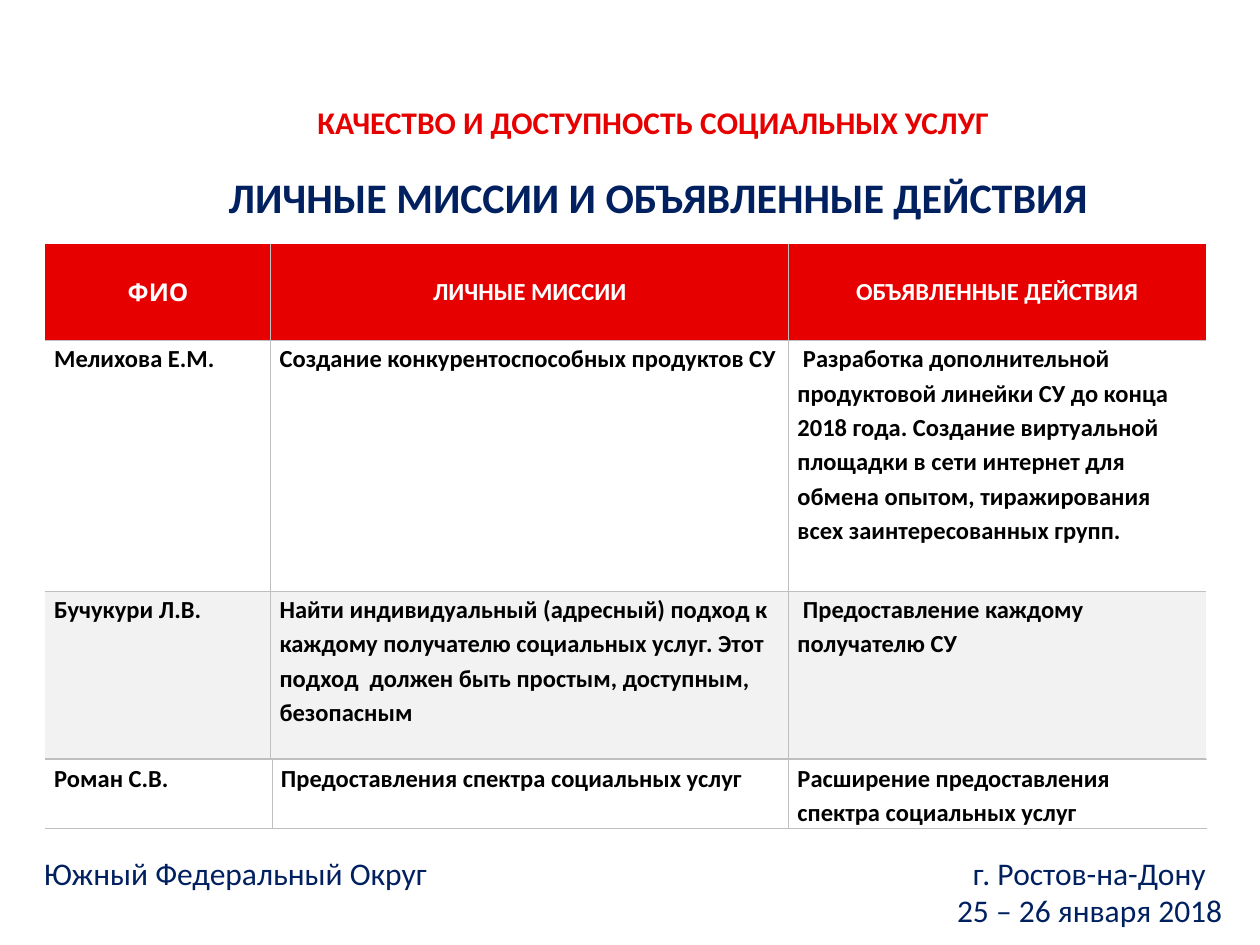
from lxml import etree
from pptx import Presentation
from pptx.dml.color import RGBColor
from pptx.enum.text import MSO_ANCHOR, MSO_AUTO_SIZE, PP_ALIGN
from pptx.oxml.ns import qn
from pptx.util import Inches, Pt

LEFT, CENTER, RIGHT = PP_ALIGN.LEFT, PP_ALIGN.CENTER, PP_ALIGN.RIGHT
TOP, MIDDLE = MSO_ANCHOR.TOP, MSO_ANCHOR.MIDDLE
TITLE_ONLY = 5

COLORS = {"red": "E60000", "navy": "002060", "white": "FFFFFF",
          "black": "000000", "band": "F2F2F2", "border": "BFBFBF"}

# Content
TITLE = "ЛИЧНЫЕ МИССИИ И ОБЪЯВЛЕННЫЕ ДЕЙСТВИЯ"
TOPIC = "КАЧЕСТВО И ДОСТУПНОСТЬ СОЦИАЛЬНЫХ УСЛУГ"
REGION, CITY, DATES = "Южный Федеральный Округ", "г. Ростов-на-Дону", "25 – 26 января 2018"
HEADER = ["ФИО", "ЛИЧНЫЕ МИССИИ", "ОБЪЯВЛЕННЫЕ ДЕЙСТВИЯ"]
MISSIONS = [
    ["Мелихова Е.М.",
     "Создание конкурентоспособных продуктов СУ",
     " Разработка дополнительной продуктовой линейки СУ до конца 2018 года. "
     "Создание виртуальной площадки в сети интернет для обмена опытом, "
     "тиражирования всех заинтересованных групп."],
    ["Бучукури Л.В.",
     "Найти индивидуальный (адресный) подход к каждому получателю социальных услуг. "
     "Этот подход  должен быть простым, доступным, безопасным",
     " Предоставление каждому получателю СУ"],
]
LAST_MISSION = ["Роман С.В.", "Предоставления спектра социальных услуг",
                "Расширение предоставления спектра социальных услуг"]

# Tables: position, column widths, row heights, rows, whether the first row is a header
TABLES = [
    ((0.36, 1.94), (1.79, 4.11, 3.31), (0.76, 1.99, 1.33), [HEADER] + MISSIONS, True),
    ((0.36, 6.03), (1.8, 4.1, 3.32), (0.54,), [LAST_MISSION], False),
]


def rgb(name):
    return RGBColor.from_string(COLORS[name])


def add_run(paragraph, text, size, color, bold=False, font="Calibri"):
    run = paragraph.add_run()
    run.text = text
    run.font.size, run.font.bold, run.font.name = Pt(size), bold, font
    run.font.color.rgb = rgb(color)


def place(shape, left, top, width, height, anchor):
    shape.left, shape.top = Inches(left), Inches(top)
    shape.width, shape.height = Inches(width), Inches(height)
    frame = shape.text_frame
    frame.auto_size, frame.word_wrap = MSO_AUTO_SIZE.NONE, True
    frame.vertical_anchor = anchor
    return frame


def set_borders(cell, visible):
    properties = cell._tc.get_or_add_tcPr()
    for side in ("L", "R", "T", "B"):
        line = etree.SubElement(properties, qn(f"a:ln{side}"), w=str(Pt(0.5)))
        if side in visible:
            fill = etree.SubElement(line, qn("a:solidFill"))
            etree.SubElement(fill, qn("a:srgbClr"), val=COLORS["border"])
        else:
            etree.SubElement(line, qn("a:noFill"))


def add_mission_table(slide, position, widths, heights, rows, has_header):
    left, top = position
    frame = slide.shapes.add_table(len(rows), len(widths), Inches(left), Inches(top),
                                   Inches(sum(widths)), Inches(sum(heights)))
    table = frame.table
    table.first_row, table.horz_banding = has_header, False
    for column, width in zip(table.columns, widths):
        column.width = Inches(width)
    for row, height in zip(table.rows, heights):
        row.height = Inches(height)
    for row_index, texts in enumerate(rows):
        is_header = has_header and row_index == 0
        fill = "red" if is_header else "band" if row_index == 2 else "white"
        for column_index, text in enumerate(texts):
            cell = table.cell(row_index, column_index)
            # Rules run between columns and around rows, leaving the outer sides open
            visible = "B" if is_header else "TB"
            visible += "L" if column_index > 0 else ""
            visible += "R" if column_index < len(widths) - 1 else ""
            set_borders(cell, visible)
            cell.fill.solid()
            cell.fill.fore_color.rgb = rgb(fill)
            cell.margin_left = cell.margin_right = Inches(0.07)
            cell.margin_top = cell.margin_bottom = Inches(0.04 if is_header else 0)
            cell.vertical_anchor = MIDDLE if is_header else TOP
            paragraph = cell.text_frame.paragraphs[0]
            paragraph.alignment = CENTER if is_header else LEFT
            paragraph.line_spacing = 1.0 if is_header else 1.15
            add_run(paragraph, text, 14, "white" if is_header else "black", True,
                    "Cabin" if is_header and column_index == 0 else "Calibri")


def add_footer(slide):
    box = slide.shapes.add_textbox(0, 0, 0, 0)
    frame = place(box, 0.13, 6.78, 9.67, 0.59, MIDDLE)
    frame.margin_left = Inches(0.22)
    place_line = frame.paragraphs[0]
    place_line.alignment = LEFT
    # A right tab stop pushes the city to the table's right edge
    tabs = etree.SubElement(place_line._p.get_or_add_pPr(), qn("a:tabLst"))
    etree.SubElement(tabs, qn("a:tab"), pos=str(Inches(9.22)), algn="r")
    add_run(place_line, f"{REGION}\t{CITY}", 18, "navy")
    date_line = frame.add_paragraph()
    date_line.alignment = RIGHT
    add_run(date_line, DATES, 18, "navy")


def main():
    presentation = Presentation()
    presentation.slide_width, presentation.slide_height = Inches(10), Inches(7.5)
    slide = presentation.slides.add_slide(presentation.slide_layouts[TITLE_ONLY])

    # Title and topic line
    title_box = slide.shapes.title
    topic_box = slide.shapes.add_textbox(0, 0, 0, 0)
    for box, text, area, anchor, size, color in (
            (title_box, TITLE, (1.68, 1.31, 7.09, 0.5), TOP, 24, "navy"),
            (topic_box, TOPIC, (1.61, 0.77, 7.15, 0.39), MIDDLE, 18, "red")):
        paragraph = place(box, *area, anchor).paragraphs[0]
        paragraph.alignment = CENTER
        add_run(paragraph, text, size, color, True)

    for table in TABLES:
        add_mission_table(slide, *table)
    add_footer(slide)
    presentation.save("out.pptx")


if __name__ == "__main__":
    main()
